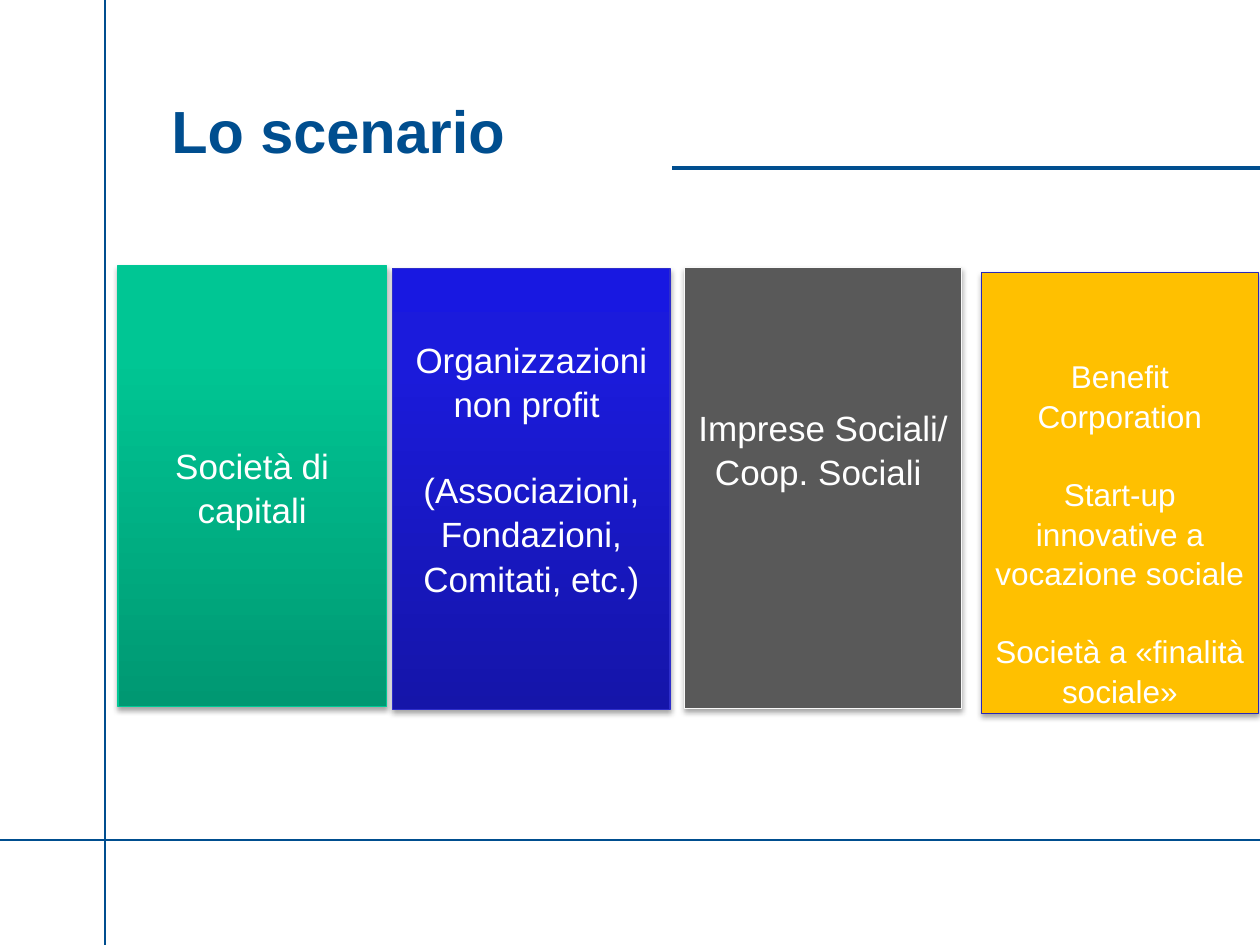
from copy import deepcopy

from lxml.etree import SubElement
from pptx import Presentation
from pptx.dml.color import RGBColor
from pptx.enum.shapes import MSO_CONNECTOR, MSO_SHAPE
from pptx.enum.text import MSO_ANCHOR, MSO_AUTO_SIZE, PP_ALIGN
from pptx.oxml.ns import qn
from pptx.util import Cm, Pt

WIDTH, HEIGHT = 25.4, 19.05
BOX_WIDTH, BOX_HEIGHT = 5.59, 8.89
INSET = 0.13
WHITE = RGBColor(0xFF, 0xFF, 0xFF)
BLUE = RGBColor(0x00, 0x4E, 0x8F)
GREEN_FILL = [RGBColor(0x00, 0x98, 0x72), RGBColor(0x00, 0xC6, 0x94), RGBColor(0x00, 0xC7, 0x95)]
GREEN_LINE = RGBColor(0x00, 0xC8, 0x96)
INDIGO_FILL = [RGBColor(0x15, 0x15, 0xA9), RGBColor(0x1B, 0x1B, 0xDC), RGBColor(0x18, 0x18, 0xE1)]
INDIGO_LINE = RGBColor(0x2E, 0x2E, 0xCB)
GREY_FILL = [RGBColor(0x59, 0x59, 0x59)]
GREY_LINE = RGBColor(0xF9, 0xF9, 0xF9)
AMBER_FILL = [RGBColor(0xFF, 0xC0, 0x00)]
AMBER_LINE = RGBColor(0x29, 0x29, 0xB8)


class Deck:
    font = "Arial"
    spacing = 1.05
    stops = (0, 0.8, 1)

    def __init__(self):
        self.prs = Presentation()
        self.prs.slide_width, self.prs.slide_height = Cm(WIDTH), Cm(HEIGHT)
        self.s = self.prs.slides.add_slide(self.prs.slide_layouts[5])

    def style(self, p, size, color, align, bold=False):
        p.alignment = align
        p.line_spacing = self.spacing
        for r in p.runs:
            r.font.name, r.font.size, r.font.bold = self.font, Pt(size), bold
            r.font.color.rgb = color

    def title(self, text, x, y, w, h):
        sp = self.s.shapes.title
        sp.left, sp.top, sp.width, sp.height = Cm(x), Cm(y), Cm(w), Cm(h)
        tf = sp.text_frame
        tf.text = text
        tf.auto_size = MSO_AUTO_SIZE.NONE
        tf.vertical_anchor = MSO_ANCHOR.TOP
        self.style(tf.paragraphs[0], 34, BLUE, PP_ALIGN.LEFT, True)

    def line(self, x1, y1, x2, y2, width):
        c = self.s.shapes.add_connector(MSO_CONNECTOR.STRAIGHT, Cm(x1), Cm(y1), Cm(x2), Cm(y2))
        c.line.color.rgb = BLUE
        c.line.width = Pt(width)
        SubElement(c._element.spPr, qn("a:effectLst"))

    def paint(self, sp, colors):
        if len(colors) == 1:
            sp.fill.solid()
            sp.fill.fore_color.rgb = colors[0]
            return
        sp.fill.gradient()
        sp.fill.gradient_angle = 90
        stops = sp._element.spPr.find(qn("a:gradFill")).find(qn("a:gsLst"))
        stops.append(deepcopy(stops[0]))
        for stop, position, color in zip(sp.fill.gradient_stops, self.stops, colors):
            stop.position = position
            stop.color.rgb = color

    def shadow(self, sp):
        sp.shadow.inherit = False
        effects = sp._element.spPr.find(qn("a:effectLst"))
        outer = SubElement(effects, qn("a:outerShdw"), blurRad=str(Pt(3.1)),
                           dist=str(Pt(1.8)), dir="5400000", rotWithShape="0")
        color = SubElement(outer, qn("a:srgbClr"), val="000000")
        SubElement(color, qn("a:alpha"), val="35000")

    def box(self, x, y, w, fill, line, texts, size=20, gap=0, above=0, below=0):
        sp = self.s.shapes.add_shape(MSO_SHAPE.RECTANGLE, Cm(x), Cm(y), Cm(w), Cm(BOX_HEIGHT))
        self.paint(sp, fill)
        sp.line.color.rgb = line
        sp.line.width = Pt(0.75)
        self.shadow(sp)
        tf = sp.text_frame
        tf.word_wrap = True
        tf.vertical_anchor = MSO_ANCHOR.MIDDLE
        tf.margin_top, tf.margin_bottom = Cm(INSET + above), Cm(INSET + below)
        tf.text = "\n".join(texts)
        for i, p in enumerate(tf.paragraphs):
            self.style(p, size, WHITE, PP_ALIGN.CENTER)
            p.space_before = Pt(gap if i else 0)


def main():
    deck = Deck()
    deck.line(13.55, 3.39, WIDTH, 3.39, 2.25)
    deck.line(2.12, 0, 2.12, HEIGHT, 1.5)
    deck.line(0, 16.93, WIDTH, 16.93, 1.5)
    deck.box(2.38, 5.36, 5.41, GREEN_FILL, GREEN_LINE, ["Società di capitali"])
    deck.box(7.92, 5.41, BOX_WIDTH, INDIGO_FILL, INDIGO_LINE,
             ["Organizzazioni non profit ", "(Associazioni, Fondazioni, Comitati, etc.)"],
             gap=24, below=0.85)
    deck.box(13.8, 5.39, BOX_WIDTH, GREY_FILL, GREY_LINE,
             ["Imprese Sociali/ Coop. Sociali "], below=1.6)
    deck.box(19.78, 5.49, BOX_WIDTH, AMBER_FILL, AMBER_LINE,
             ["Benefit Corporation", "Start-up innovative a vocazione sociale",
              "Società a «finalità sociale»"], size=18, gap=21.7, above=1.6)
    deck.title("Lo scenario", 3.2, 1.7, 21.77, 1.7)
    deck.prs.save("out.pptx")


if __name__ == "__main__":
    main()
